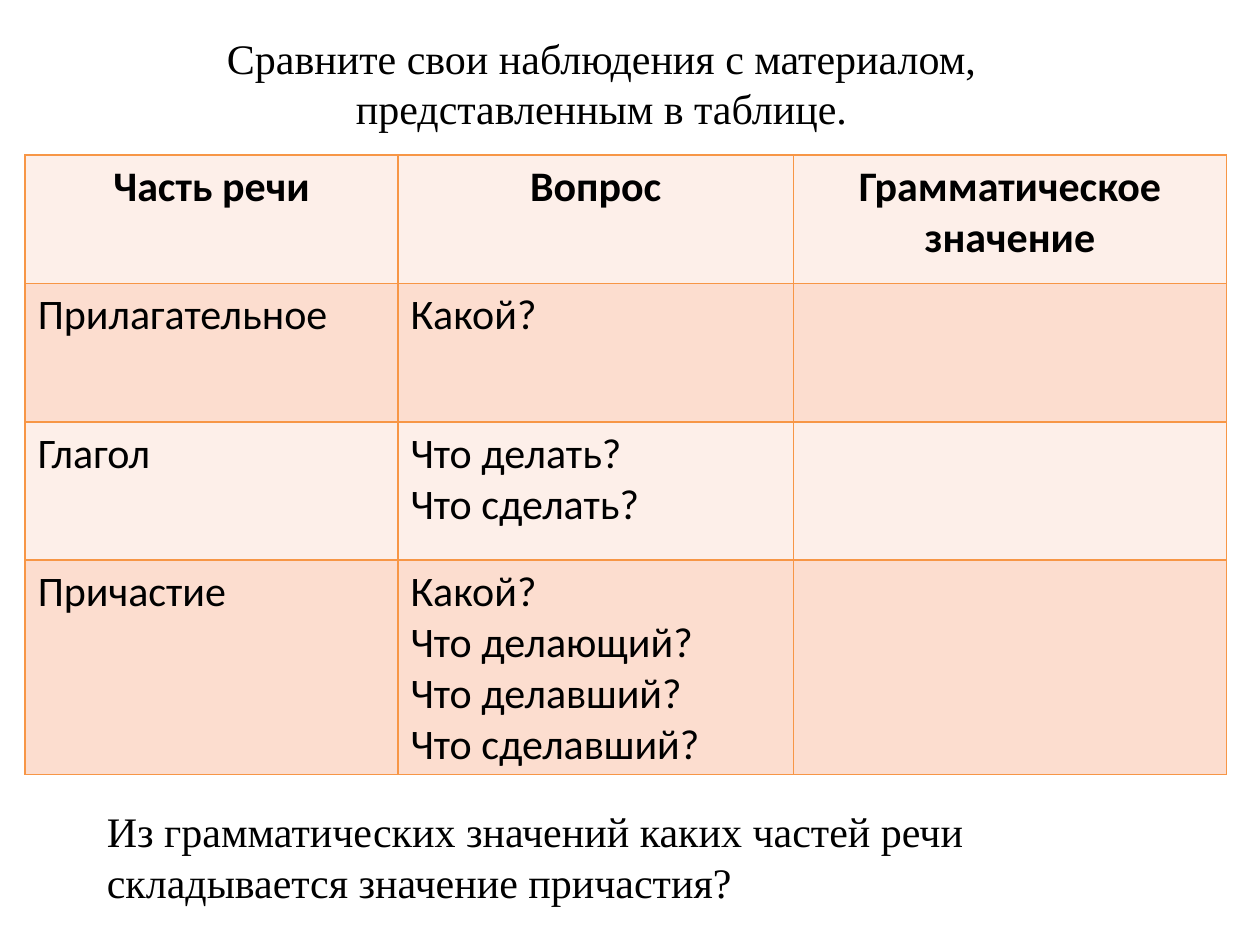
from lxml import etree
from pptx import Presentation
from pptx.dml.color import RGBColor
from pptx.enum import text
from pptx.oxml.ns import qn
from pptx.util import Pt

TITLE = "Сравните свои наблюдения с материалом, представленным в таблице."
TASK = ("Из грамматических значений каких частей речи "
        "складывается значение причастия?")
ROWS = [
    ("Часть речи", "Вопрос", "Грамматическое значение"),
    ("Прилагательное", "Какой?", ""),
    ("Глагол", "Что делать?\nЧто сделать?", ""),
    ("Причастие",
     "Какой?\nЧто делающий?\nЧто делавший?\nЧто сделавший?", ""),
]
WIDTHS = [213, 226, 247.5]
HEIGHTS = [73.5, 79, 79, 122]
BANDS = ["FDEFE9", "FCDDCF"]
EDGE = "F79646"
LEFT, CENTER = text.PP_ALIGN.LEFT, text.PP_ALIGN.CENTER


def color(code):
    return RGBColor.from_string(code)


def style(frame, face, align, bold=False):
    for par in frame.paragraphs:
        par.alignment = align
        par.font.size = Pt(24)
        for run in par.runs:
            run.font.name = face
            run.font.size = Pt(24)
            run.font.bold = bold
            run.font.color.rgb = color("000000")


def add_note(slide, words, left, top, align):
    box = slide.shapes.add_textbox(Pt(left), Pt(top), Pt(567.5), Pt(65))
    frame = box.text_frame
    frame.word_wrap = True
    frame.auto_size = text.MSO_AUTO_SIZE.SHAPE_TO_FIT_TEXT
    frame.text = words
    style(frame, "Times New Roman", align)


def add_edges(cell):
    """Draw a thin line on all four sides of a cell."""
    props = cell._tc.get_or_add_tcPr()
    for spot, side in enumerate(("lnL", "lnR", "lnT", "lnB")):
        line = etree.Element(qn("a:" + side), w=str(Pt(1)))
        fill = etree.SubElement(line, qn("a:solidFill"))
        etree.SubElement(fill, qn("a:srgbClr"), val=EDGE)
        props.insert(spot, line)


def add_grid(slide):
    grid = slide.shapes.add_table(
        len(ROWS), len(WIDTHS), Pt(14.4), Pt(88.6),
        Pt(sum(WIDTHS)), Pt(sum(HEIGHTS))).table
    for col, width in zip(grid.columns, WIDTHS):
        col.width = Pt(width)
    for r, (row, height) in enumerate(zip(ROWS, HEIGHTS)):
        grid.rows[r].height = Pt(height)
        for c, words in enumerate(row):
            cell = grid.cell(r, c)
            cell.text_frame.text = words
            head = r == 0
            style(cell.text_frame, "Calibri", CENTER if head else LEFT, head)
            cell.fill.solid()
            cell.fill.fore_color.rgb = color(BANDS[r % 2])
            add_edges(cell)


def main():
    deck = Presentation()
    deck.slide_width, deck.slide_height = Pt(720), Pt(540)
    slide = deck.slides.add_slide(deck.slide_layouts[6])
    add_note(slide, TITLE, 60, 15, CENTER)
    add_grid(slide)
    add_note(slide, TASK, 54, 457, LEFT)
    deck.save("out.pptx")


if __name__ == "__main__":
    main()
